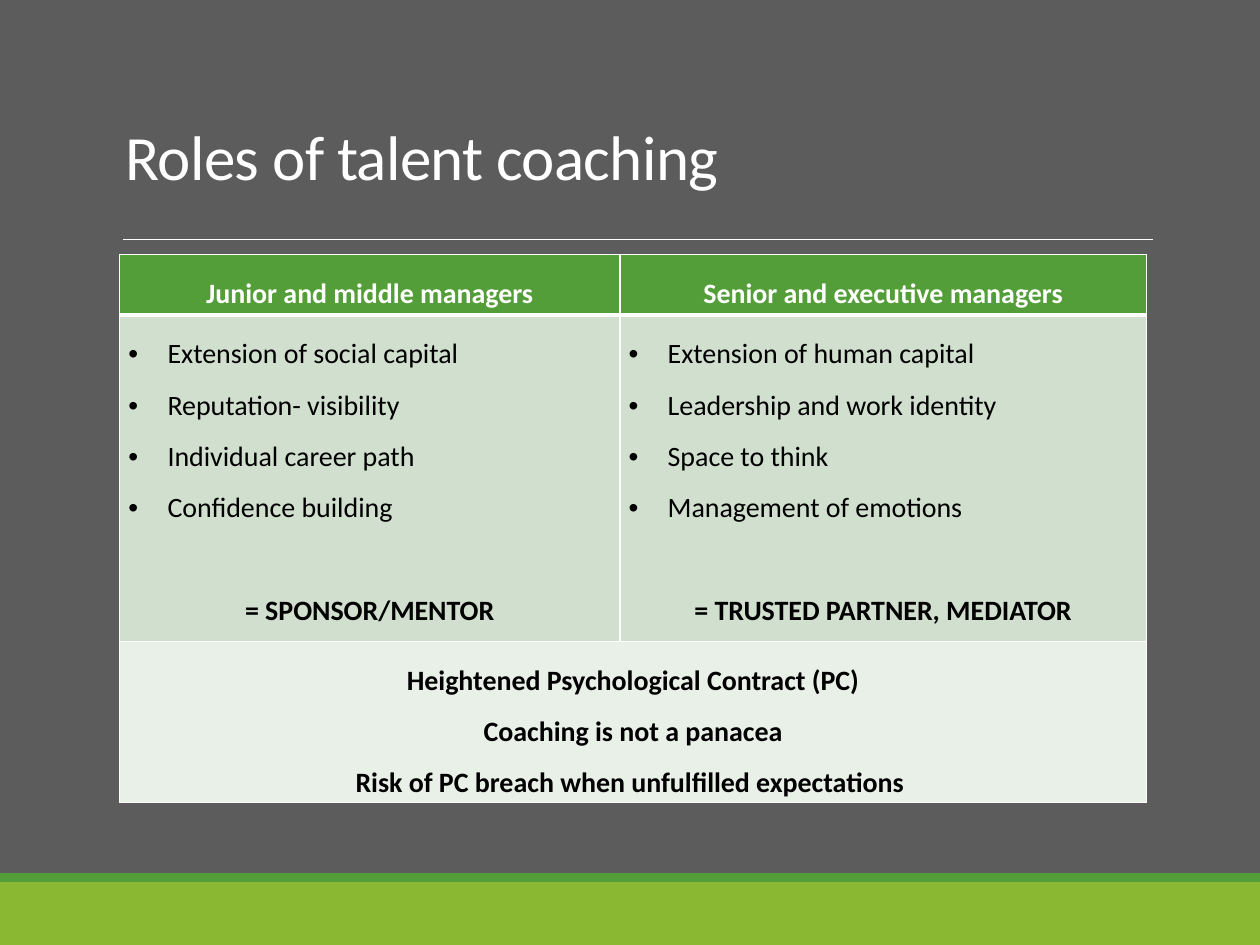
from dataclasses import dataclass

from lxml.etree import SubElement
from pptx import Presentation
from pptx.dml.color import RGBColor
from pptx.enum.shapes import MSO_CONNECTOR, MSO_SHAPE
from pptx.enum.text import MSO_ANCHOR, PP_ALIGN
from pptx.oxml import parse_xml
from pptx.oxml.ns import nsdecls, qn
from pptx.util import Inches, Pt

GREY = RGBColor(0x5C, 0x5C, 0x5C)
WHITE = RGBColor(0xFF, 0xFF, 0xFF)
BLACK = RGBColor(0x00, 0x00, 0x00)
GREEN = RGBColor(0x54, 0x9E, 0x39)
LIME = RGBColor(0x8A, 0xB8, 0x33)
SAGE = RGBColor(0xD1, 0xDF, 0xCE)
PALE = RGBColor(0xE9, 0xF0, 0xE8)
FONT = "Calibri"
BLANK_LAYOUT = 6
SKIPPED_LINE = 29.3
COLUMN_WIDTHS = (3.97, 4.18)
ROW_HEIGHTS = (0.31, 2.59, 0.88)


@dataclass(frozen=True)
class Band:
    top: float
    height: float
    color: RGBColor


@dataclass(frozen=True)
class ManagerGroup:
    heading: str
    roles: tuple[str, ...]
    summary: str


BANDS = (Band(7, 0.5, LIME), Band(6.93, 0.07, GREEN))
GROUPS = (
    ManagerGroup(
        "Junior and middle managers",
        ("Extension of social capital", "Reputation- visibility",
         "Individual career path", "Confidence building"),
        "= SPONSOR/MENTOR",
    ),
    ManagerGroup(
        "Senior and executive managers",
        ("Extension of human capital", "Leadership and work identity",
         "Space to think", "Management of emotions"),
        "= TRUSTED PARTNER, MEDIATOR",
    ),
)
CONCLUSIONS = (
    "Heightened Psychological Contract (PC)",
    "Coaching is not a panacea",
    "Risk of PC breach when unfulfilled expectations ",
)


def add_text(frame, text: str, *, size=16, color=BLACK, bold=False,
             align=PP_ALIGN.CENTER, line_spacing=1.5, space_before=0,
             bullet=False, tracking=None) -> None:
    """Fill the first paragraph if it is empty, otherwise append one."""
    first = frame.paragraphs[0]
    para = frame.add_paragraph() if first.runs else first
    para.alignment = align
    para.line_spacing = line_spacing
    para.space_before = Pt(space_before)
    if bullet:
        properties = para._p.get_or_add_pPr()
        properties.set("marL", str(Inches(0.31)))
        properties.set("indent", str(-Inches(0.31)))
        SubElement(properties, qn("a:buFont")).set("typeface", "Arial")
        SubElement(properties, qn("a:buChar")).set("char", "•")
    span = para.add_run()
    span.text = text
    span.font.name = FONT
    span.font.size = Pt(size)
    span.font.bold = bold
    span.font.color.rgb = color
    if tracking is not None:
        span._r.get_or_add_rPr().set("spc", str(round(tracking * 100)))


def style_cell(cell, fill: RGBColor, top_width=1, bottom_width=1) -> None:
    cell.fill.solid()
    cell.fill.fore_color.rgb = fill
    cell.margin_left = cell.margin_right = Inches(0.07)
    cell.margin_top = cell.margin_bottom = Inches(0.04)
    edges = (("lnL", 1), ("lnR", 1), ("lnT", top_width), ("lnB", bottom_width))
    for position, (edge, width) in enumerate(edges):
        border = parse_xml(
            f'<a:{edge} {nsdecls("a")} w="{Pt(width)}"><a:solidFill>'
            f'<a:srgbClr val="{WHITE}"/></a:solidFill></a:{edge}>'
        )
        cell._tc.get_or_add_tcPr().insert(position, border)


def add_band(page, band: Band) -> None:
    box = page.shapes.add_shape(MSO_SHAPE.RECTANGLE, 0, Inches(band.top),
                                Inches(10), Inches(band.height))
    box.shadow.inherit = False
    box.fill.solid()
    box.fill.fore_color.rgb = band.color
    box.line.fill.background()


def add_title(page) -> None:
    rule = page.shapes.add_connector(MSO_CONNECTOR.STRAIGHT, Inches(0.98),
                                     Inches(1.9), Inches(9.15), Inches(1.9))
    rule.line.color.rgb = WHITE
    rule.line.width = Pt(0.5)
    SubElement(rule._element.spPr, qn("a:effectLst"))

    box = page.shapes.add_textbox(Inches(0.9), Inches(0.43),
                                  Inches(8.25), Inches(1.15))
    frame = box.text_frame
    frame.word_wrap = True
    frame.vertical_anchor = MSO_ANCHOR.BOTTOM
    add_text(frame, "Roles of talent coaching", size=36, color=WHITE,
             align=PP_ALIGN.LEFT, line_spacing=0.85, tracking=-0.4)


def add_roles_table(page) -> None:
    holder = page.shapes.add_table(len(ROW_HEIGHTS), len(COLUMN_WIDTHS),
                                   Inches(0.95), Inches(2.02),
                                   Inches(8.15), Inches(4.25))
    table = holder.table
    for column, width in zip(table.columns, COLUMN_WIDTHS):
        column.width = Inches(width)
    for row, height in zip(table.rows, ROW_HEIGHTS):
        row.height = Inches(height)

    # One column for each group of managers
    for index, group in enumerate(GROUPS):
        heading, body, footer = (table.cell(row, index) for row in range(3))
        style_cell(heading, GREEN, bottom_width=3)
        style_cell(body, SAGE, top_width=3)
        style_cell(footer, PALE)
        add_text(heading.text_frame, group.heading, color=WHITE, bold=True)
        for role in group.roles:
            add_text(body.text_frame, role, align=PP_ALIGN.LEFT, bullet=True)
        add_text(body.text_frame, group.summary, bold=True,
                 space_before=SKIPPED_LINE)

    # Conclusions shared by both groups
    shared = table.cell(2, 0)
    shared.merge(table.cell(2, 1))
    for conclusion in CONCLUSIONS:
        add_text(shared.text_frame, conclusion, bold=True)


def main() -> None:
    deck = Presentation()
    deck.slide_width, deck.slide_height = Inches(10), Inches(7.5)
    page = deck.slides.add_slide(deck.slide_layouts[BLANK_LAYOUT])
    page.background.fill.solid()
    page.background.fill.fore_color.rgb = GREY
    for band in BANDS:
        add_band(page, band)
    add_title(page)
    add_roles_table(page)
    deck.save("out.pptx")


if __name__ == "__main__":
    main()
